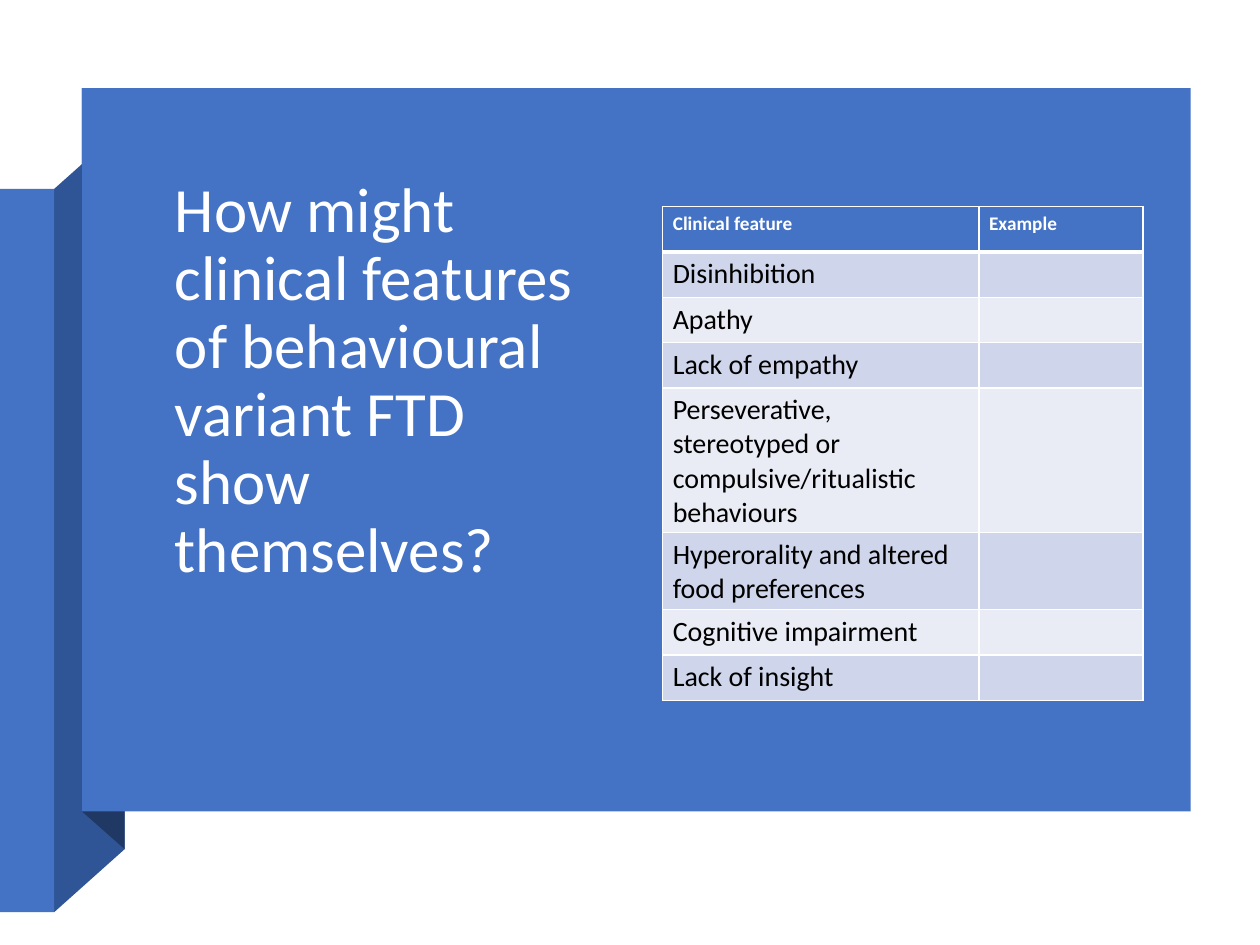
from lxml.etree import SubElement
from pptx import Presentation
from pptx.dml.color import RGBColor
from pptx.enum.shapes import MSO_SHAPE as Shape
from pptx.enum.text import MSO_ANCHOR as Anchor
from pptx.oxml.ns import qn
from pptx.util import Inches, Pt

WIDTH, HEIGHT = 10, 7.5
FONT = "Calibri"
COLORS = {
    "panel": "4472C4",
    "fold": "2F5597",
    "fold_shadow": "203864",
    "band_dark": "CFD5EA",
    "band_light": "E9EBF5",
    "white": "FFFFFF",
    "black": "000000",
}
TITLE = "How might clinical features of behavioural variant FTD show themselves?"
HEADINGS = ["Clinical feature", "Example"]
FEATURES = [
    "Disinhibition",
    "Apathy",
    "Lack of empathy",
    "Perseverative, stereotyped or compulsive/ritualistic behaviours",
    "Hyperorality and altered food preferences",
    "Cognitive impairment",
    "Lack of insight",
]
COLUMN_WIDTHS = [2.51, 1.3]
ROW_HEIGHT = 0.36
TALL_ROWS = {4: 1.1, 5: 0.61}

# Edges shared by the ribbon's parts, in inches
STRIP_RIGHT, STRIP_TOP, STRIP_BOTTOM = 0.43, 1.5, 7.24
PANEL_LEFT, PANEL_TOP, PANEL_BOTTOM = 0.65, 0.7, 6.44
FOLD_RIGHT, FOLD_TOP, FOLD_BOTTOM = 0.99, 1, 6.74


def rgb(name):
    return RGBColor.from_string(COLORS[name])


def paint(shape, color):
    shape.shadow.inherit = False
    shape.fill.solid()
    shape.fill.fore_color.rgb = rgb(color)
    shape.line.fill.background()


def add_rectangle(slide, left, top, width, height, color):
    box = [Inches(length) for length in (left, top, width, height)]
    paint(slide.shapes.add_shape(Shape.RECTANGLE, *box), color)


def add_polygon(slide, points, color):
    corners = [(Inches(x), Inches(y)) for x, y in points]
    builder = slide.shapes.build_freeform(*corners[0])
    builder.add_line_segments(corners[1:], close=True)
    paint(builder.convert_to_shape(), color)


def format_runs(paragraph, size, color, bold=False):
    for run in paragraph.runs:
        run.font.name = FONT
        run.font.size = Pt(size)
        run.font.bold = bold
        run.font.color.rgb = rgb(color)


def add_ribbon(slide):
    """Draw the main panel with the strip folded behind its left side."""
    add_polygon(slide, [(STRIP_RIGHT, STRIP_BOTTOM), (FOLD_RIGHT, FOLD_BOTTOM),
                        (FOLD_RIGHT, FOLD_TOP), (STRIP_RIGHT, STRIP_TOP)], "fold")
    add_rectangle(slide, 0, STRIP_TOP, STRIP_RIGHT, STRIP_BOTTOM - STRIP_TOP, "panel")
    add_polygon(slide, [(PANEL_LEFT, PANEL_BOTTOM), (FOLD_RIGHT, FOLD_BOTTOM),
                        (FOLD_RIGHT, FOLD_TOP), (PANEL_LEFT, PANEL_TOP)], "fold_shadow")
    add_rectangle(slide, PANEL_LEFT, PANEL_TOP, 8.8, PANEL_BOTTOM - PANEL_TOP, "panel")


def add_title(slide):
    box = slide.shapes.add_textbox(Inches(1.29), Inches(1.22), Inches(3.44), Inches(3.48))
    frame = box.text_frame
    frame.word_wrap = True
    frame.vertical_anchor = Anchor.BOTTOM
    frame.text = TITLE
    paragraph = frame.paragraphs[0]
    paragraph.line_spacing = 0.9
    format_runs(paragraph, 36, "white")


def add_borders(cell, top, bottom):
    """Draw white cell borders; top and bottom are widths in points."""
    properties = cell._tc.get_or_add_tcPr()
    for side, width in (("L", 1), ("R", 1), ("T", top), ("B", bottom)):
        line = SubElement(properties, qn(f"a:ln{side}"), w=str(Pt(width)))
        fill = SubElement(line, qn("a:solidFill"))
        SubElement(fill, qn("a:srgbClr"), val=COLORS["white"])


def format_cell(cell, row, text):
    is_header = row == 0
    size = 11 if is_header else 16
    cell.margin_left = cell.margin_right = Inches(0.08)
    cell.margin_top = cell.margin_bottom = Inches(0.04)
    paragraph = cell.text_frame.paragraphs[0]
    if text:
        paragraph.text = text
        format_runs(paragraph, size, "white" if is_header else "black", is_header)
    else:
        # An empty cell takes its line height from the end-of-paragraph size
        paragraph._p.get_or_add_endParaRPr().set("sz", str(size * 100))
    add_borders(cell, top=3 if row == 1 else 1, bottom=3 if is_header else 1)
    band = "band_dark" if row % 2 else "band_light"
    cell.fill.solid()
    cell.fill.fore_color.rgb = rgb("panel" if is_header else band)


def add_feature_table(slide):
    rows = [HEADINGS] + [[feature, ""] for feature in FEATURES]
    heights = [TALL_ROWS.get(row, ROW_HEIGHT) for row in range(len(rows))]
    table = slide.shapes.add_table(
        len(rows), len(HEADINGS), Inches(5.26), Inches(1.64),
        Inches(sum(COLUMN_WIDTHS)), Inches(sum(heights))).table
    for column, width in zip(table.columns, COLUMN_WIDTHS):
        column.width = Inches(width)
    for row, (texts, height) in enumerate(zip(rows, heights)):
        table.rows[row].height = Inches(height)
        for column, text in enumerate(texts):
            format_cell(table.cell(row, column), row, text)


def main():
    presentation = Presentation()
    presentation.slide_width = Inches(WIDTH)
    presentation.slide_height = Inches(HEIGHT)
    slide = presentation.slides.add_slide(presentation.slide_layouts[6])
    add_ribbon(slide)
    add_title(slide)
    add_feature_table(slide)
    presentation.save("out.pptx")


if __name__ == "__main__":
    main()
